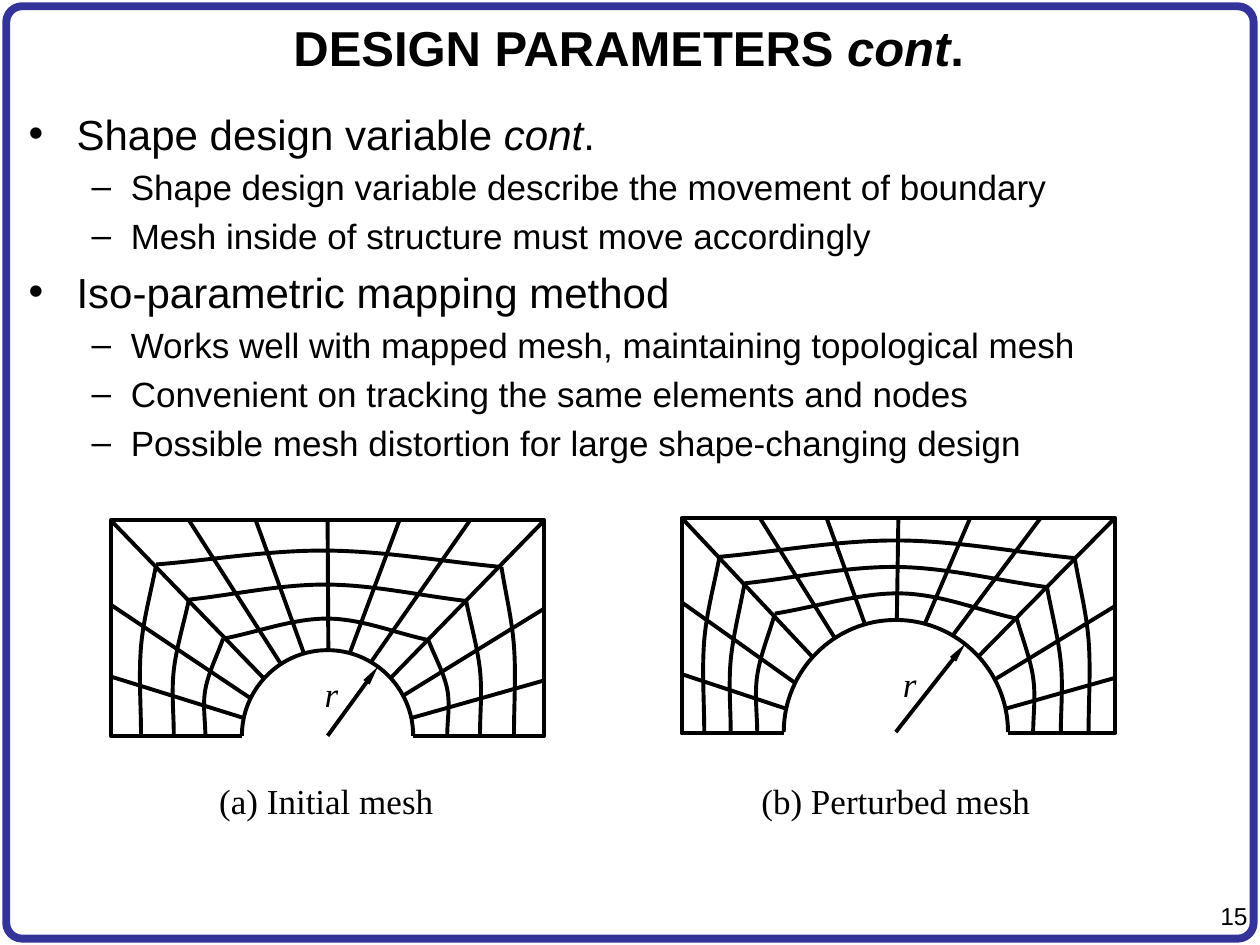
import math
from pptx import Presentation
from pptx import util as u
from pptx.dml.color import RGBColor
from pptx.enum import shapes, text
from pptx.oxml.ns import qn
from lxml import etree

SANS, SERIF = "Arial", "Times New Roman"
BLACK, WHITE, NAVY = "000000", "FFFFFF", "333399"
MESH_W, MESH_H = 3.44, 1.71
TOP_XS = [0, 0.62, 1.15, 1.72, 2.29, 2.85, MESH_W]
RIM = ([(0, 1.24), (0, 0.67)] + [(x, 0) for x in TOP_XS]
       + [(MESH_W, 0.7), (MESH_W, 1.27)])
ANGLES = [168, 154, 138, 123, 106, 89.5, 75, 59.5, 42.5, 28, 12]

BULLETS = [
    (0, [("Shape design variable ", False), ("cont", True), (".", False)]),
    (1, [("Shape design variable describe the movement of boundary", False)]),
    (1, [("Mesh inside of structure must move accordingly", False)]),
    (0, [("Iso-parametric mapping method", False)]),
    (1, [("Works well with mapped mesh, maintaining topological mesh", False)]),
    (1, [("Convenient on tracking the same elements and nodes", False)]),
    (1, [("Possible mesh distortion for large shape-changing design", False)]),
]
LEVELS = [("•", 24, 0.38, -0.38, 5.5), ("–", 20, 0.81, -0.31, 4)]

INITIAL = dict(
    center=(1.72, 1.71), radius=0.68, arrow=(0.4, -0.55), label=(1.51, 1.21),
    layers=[
        [(0.24, 1.71), (0.24, 1), (0.36, 0.35), (1.71, 0.24),
         (3.1, 0.37), (3.2, 1), (3.2, 1.7)],
        [(0.5, 1.7), (0.5, 1.19), (0.62, 0.63), (1.71, 0.51),
         (2.82, 0.64), (2.93, 1.19), (2.93, 1.7)],
        [(0.75, 1.71), (0.75, 1.34), (0.89, 0.94), (1.72, 0.78),
         (2.52, 0.95), (2.67, 1.34), (2.67, 1.71)],
    ])
PERTURBED = dict(
    center=(1.7, 1.7), radius=0.89, arrow=(0.55, -0.7), label=(1.57, 1.15),
    layers=[
        [(0.18, 1.71), (0.18, 0.97), (0.3, 0.31), (1.71, 0.18),
         (3.12, 0.32), (3.23, 0.97), (3.23, 1.7)],
        [(0.39, 1.7), (0.39, 1.13), (0.5, 0.52), (1.71, 0.39),
         (2.9, 0.55), (3.01, 1.15), (3.01, 1.7)],
        [(0.6, 1.71), (0.6, 1.25), (0.74, 0.76), (1.74, 0.6),
         (2.66, 0.8), (2.79, 1.27), (2.79, 1.71)],
    ])


def color(value):
    return RGBColor.from_string(value)


def add_run(p, words, size, font=SANS, bold=False, italic=False):
    r = p.add_run()
    r.text = words
    r.font.name, r.font.size = font, u.Pt(size)
    r.font.bold, r.font.italic = bold, italic
    r.font.color.rgb = color(BLACK)


def add_box(s, box, inset=True, anchor=text.MSO_ANCHOR.TOP):
    tf = s.shapes.add_textbox(*map(u.Inches, box)).text_frame
    tf.word_wrap = True
    tf.vertical_anchor = anchor
    if not inset:
        tf.margin_left = tf.margin_right = tf.margin_top = tf.margin_bottom = 0
    return tf


def add_label(s, box, words, italic=False):
    p = add_box(s, box, inset=False).paragraphs[0]
    p.alignment = text.PP_ALIGN.CENTER
    add_run(p, words, 20, SERIF, italic=italic)


def add_frame(s, box):
    sp = s.shapes.add_shape(shapes.MSO_SHAPE.ROUNDED_RECTANGLE, *map(u.Inches, box))
    sp.adjustments[0] = 0.017
    sp.shadow.inherit = False
    sp.fill.background()
    sp.line.color.rgb = color(NAVY)
    sp.line.width = u.Pt(4.5)


def add_page_number(s, box):
    p = add_box(s, box).paragraphs[0]
    p.alignment = text.PP_ALIGN.RIGHT
    add_run(p, "15", 14)


def add_title(s, box):
    p = add_box(s, box, anchor=text.MSO_ANCHOR.MIDDLE).paragraphs[0]
    p.alignment = text.PP_ALIGN.CENTER
    for words, italic in [("DESIGN PARAMETERS ", False), ("cont", True), (".", False)]:
        add_run(p, words, 28, bold=True, italic=italic)


def add_bullets(s, box):
    tf = add_box(s, box)
    for i, (level, runs) in enumerate(BULLETS):
        mark, size, margin, indent, gap = LEVELS[level]
        p = tf.add_paragraph() if i else tf.paragraphs[0]
        p.level = level
        p.space_before = u.Pt(gap)
        pPr = p._p.get_or_add_pPr()
        pPr.set("marL", str(u.Inches(margin)))
        pPr.set("indent", str(u.Inches(indent)))
        etree.SubElement(pPr, qn("a:buFont")).set("typeface", SANS)
        etree.SubElement(pPr, qn("a:buChar")).set("char", mark)
        for words, italic in runs:
            add_run(p, words, size, italic=italic)


def smooth_controls(start, mid, end):
    pull = [(e - a) / 6 for a, e in zip(start, end)]
    before = [m - d for m, d in zip(mid, pull)]
    after = [m + d for m, d in zip(mid, pull)]
    lead = [a + (m - a) / 3 for a, m in zip(start, mid)]
    trail = [e + (m - e) / 3 for e, m in zip(end, mid)]
    return [start, lead, before, mid, after, trail, end]


def arch_controls(cx, cy, radius):
    k = 0.55
    unit = [(-1, 0), (-1, k), (-k, 1), (0, 1), (k, 1), (1, k), (1, 0)]
    return [(cx + radius * x, cy - radius * y) for x, y in unit]


def bend(sp):
    segments = list(sp._element.iter(qn("a:lnTo")))
    for i in range(0, len(segments), 3):
        first, *others = segments[i:i + 3]
        first.tag = qn("a:cubicBezTo")
        for segment in others:
            first.append(segment[0])
            segment.getparent().remove(segment)


def add_mesh(s, left, top, mesh):
    cx, cy = mesh["center"]
    radius = mesh["radius"]

    def place(point):
        return u.Inches(left + point[0]), u.Inches(top + point[1])

    def on_hole(angle):
        a = math.radians(angle)
        return cx + radius * math.cos(a), cy - radius * math.sin(a)

    def outline(points, curved=True):
        start, *rest = map(place, points)
        fb = s.shapes.build_freeform(*start)
        fb.add_line_segments(rest, close=False)
        sp = fb.convert_to_shape()
        if curved:
            bend(sp)
        sp.shadow.inherit = False
        sp.fill.background()
        sp.line.color.rgb = color(BLACK)
        sp.line.width = u.Pt(2.25)

    def line(start, end, arrow=False):
        sp = s.shapes.add_connector(shapes.MSO_CONNECTOR.STRAIGHT,
                                    *place(start), *place(end))
        sp.line.color.rgb = color(BLACK)
        sp.line.width = u.Pt(2.25)
        if arrow:
            tail = etree.SubElement(sp.line._get_or_add_ln(), qn("a:tailEnd"))
            for key, value in [("type", "triangle"), ("w", "sm"), ("len", "lg")]:
                tail.set(key, value)
        etree.SubElement(sp._element.spPr, qn("a:effectLst"))

    outline([(cx - radius, MESH_H), (0, MESH_H), (0, 0), (MESH_W, 0),
             (MESH_W, MESH_H), (cx + radius, MESH_H)], curved=False)
    outline(arch_controls(cx, cy, radius))
    for angle, rim in zip(ANGLES, RIM):
        line(on_hole(angle), rim)
    for layer in mesh["layers"]:
        for i in (0, 2, 4):
            outline(smooth_controls(*layer[i:i + 3]))
    dx, dy = mesh["arrow"]
    line((cx, cy), (cx + dx, cy + dy), arrow=True)
    x, y = mesh["label"]
    add_label(s, (left + x, top + y, 0.48, 0.38), "r", italic=True)


def main():
    prs = Presentation()
    prs.slide_width, prs.slide_height = u.Inches(10), u.Inches(7.5)
    s = prs.slides.add_slide(prs.slide_layouts[6])
    s.background.fill.solid()
    s.background.fill.fore_color.rgb = color(WHITE)
    add_frame(s, (0.05, 0.05, 9.9, 7.4))
    add_page_number(s, (9.46, 7.1, 0.54, 0.33))
    add_title(s, (0.04, 0.05, 9.9, 0.65))
    add_bullets(s, (0.13, 0.81, 9.74, 5.93))
    add_mesh(s, 0.88, 4.13, INITIAL)
    add_mesh(s, 5.41, 4.11, PERTURBED)
    add_label(s, (0.99, 6.19, 3.2, 0.43), "(a) Initial mesh")
    add_label(s, (5.51, 6.19, 3.2, 0.43), "(b) Perturbed mesh")
    prs.save("out.pptx")


if __name__ == "__main__":
    main()
